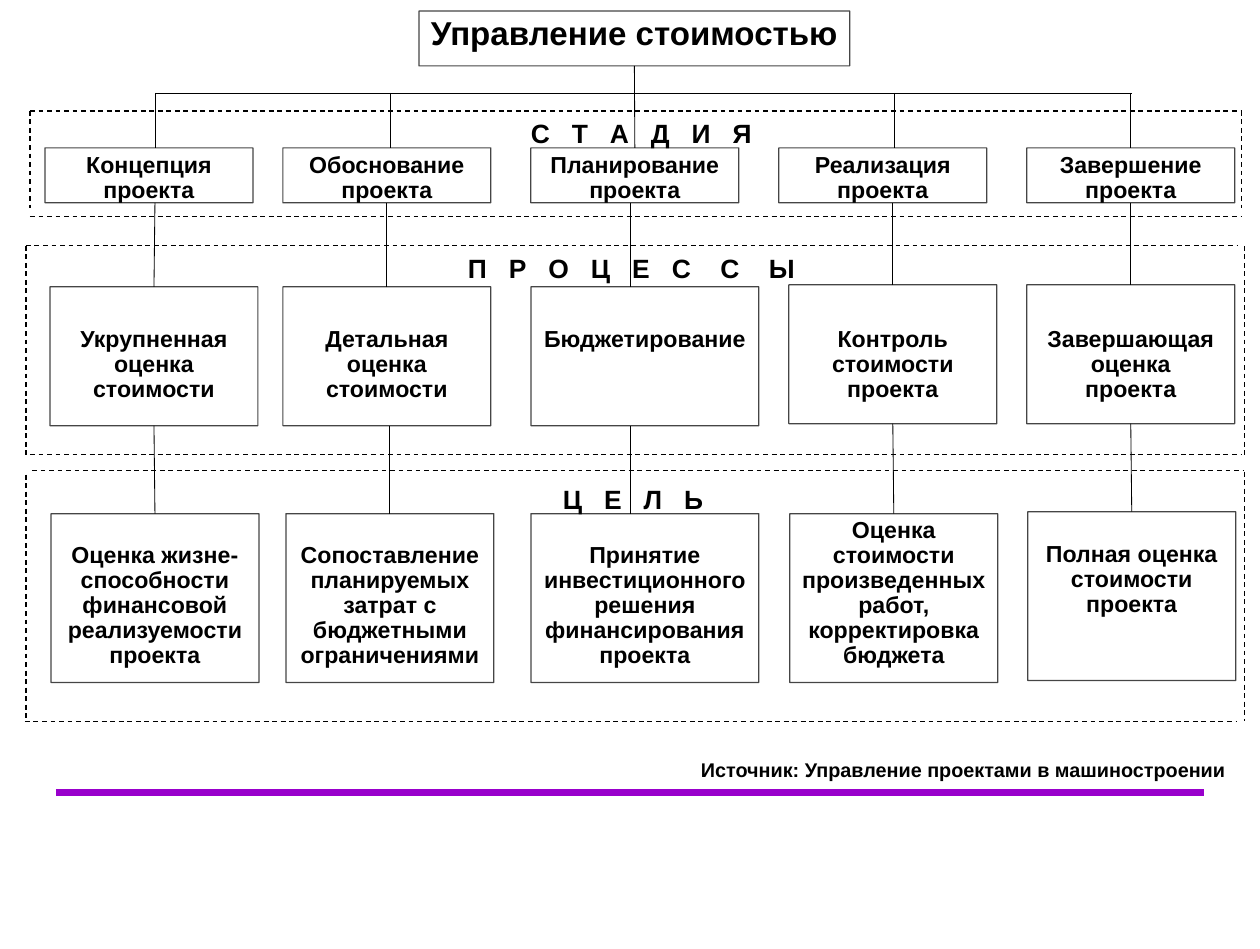
"""Builds the slide on cost management across project stages, processes and goals."""
from lxml import etree
from pptx import Presentation
from pptx import util as u
from pptx.dml.color import RGBColor
from pptx.enum import dml, shapes, text
from pptx.oxml import ns

PX = 7684
SLIDE_INCHES = (10.59, 7.98)
COLORS = {"ink": "000000", "paper": "FFFFFF", "rule": "9900CC"}
BOX_LINE_ALPHA = 72000
JOIN_REACH = 2
TOP, BOTTOM = 0, 2

TITLE = ("Управление стоимостью", (419, 11, 431, 55))
STAGE_TOP, STAGE_HEIGHT, PROCESS_HEIGHT, GOAL_HEIGHT = 148, 55, 139, 169
STAGES = [
    ("Концепция проекта", 45, STAGE_TOP, 208, 6),
    ("Обоснование проекта", 283, STAGE_TOP, 208, 6),
    ("Планирование проекта", 531, STAGE_TOP, 208, 6),
    ("Реализация проекта", 779, STAGE_TOP, 208, 6),
    ("Завершение проекта", 1027, STAGE_TOP, 208, 6),
]
PROCESSES = [
    ("Укрупненная оценка стоимости", 50, 287, 208, 41),
    ("Детальная оценка стоимости", 283, 287, 208, 41),
    ("Бюджетирование", 531, 287, 228, 41),
    ("Контроль стоимости проекта", 789, 285, 208, 43),
    ("Завершающая оценка проекта", 1027, 285, 208, 43),
]
GOALS = [
    ("Оценка жизне- способности финансовой реализуемости проекта", 51, 514, 208, 30),
    ("Сопоставление планируемых затрат с бюджетными ограничениями", 286, 514, 208, 30),
    ("Принятие инвестиционного решения финансирования проекта", 531, 514, 228, 30),
    ("Оценка стоимости произведенных работ, корректировка бюджета", 790, 514, 208, 5),
    ("Полная оценка стоимости проекта", 1028, 512, 208, 31),
]
SIDE_INSET = 11
WIDE_INSETS = {"Завершающая оценка проекта": 18}
BUS = (156, 1132, 93)
DROPS = {0: 155, 1: 391, 3: 895, 4: 1131}
STAGE_LINKS = [155, 387, 631, 893, 1131]
GOAL_LINKS = [155, 390, 631, 893, 1132]
FRAME_ROWS = [(30, 1241, 111), (30, 1241, 217), (26, 1238, 246),
              (30, 1241, 455), (32, 1244, 471), (25, 1236, 722)]
FRAME_SIDES = [(30, 111, 208), (1242, 111, 208), (26, 246, 455),
               (1245, 246, 456), (26, 475, 722), (1245, 472, 721)]
RULE = (56, 793, 1204, 793)
LABELS = [
    ([("С Т А Д И Я", 445)], (520, 111, 248, 44), 16),
    ([("П Р О Ц Е ", 445), ("С С ", 667), ("Ы", 0)], (457, 246, 362, 44), 16),
    ([("Ц Е Л Ь", 445)], (552, 477, 248, 44), 16),
    ([("Источник: Управление проектами в машиностроении", 0)], (690, 752, 560, 36), 12),
]


def color(name):
    return RGBColor.from_string(COLORS[name])


def apply(target, values):
    for name, value in values.items():
        setattr(target, name, value)


def write(box, spans, size, top_inset=6, side_inset=SIDE_INSET, **layout):
    frame = box.text_frame
    apply(frame, {"word_wrap": True, "vertical_anchor": text.MSO_ANCHOR.TOP,
                  "margin_left": side_inset * PX, "margin_right": side_inset * PX,
                  "margin_top": top_inset * PX, "margin_bottom": 6 * PX})
    para = frame.paragraphs[0]
    apply(para, layout)
    for words, spacing in spans:
        span = para.add_run()
        span.text = words
        apply(span.font, {"name": "Arial", "size": u.Pt(size), "bold": True})
        span.font.color.rgb = color("ink")
        if spacing:
            span.font._element.set("spc", str(spacing))


def add_box(page, words, place, size=14, top_inset=6):
    box = page.shapes.add_shape(shapes.MSO_SHAPE.RECTANGLE, *(n * PX for n in place))
    box.shadow.inherit = False
    box.fill.solid()
    box.fill.fore_color.rgb = color("paper")
    box.line.color.rgb = color("ink")
    box.line.width = u.Pt(0.75)
    ink = box._element.spPr.find(ns.qn("a:ln")).find(".//" + ns.qn("a:srgbClr"))
    etree.SubElement(ink, ns.qn("a:alpha")).set("val", str(BOX_LINE_ALPHA))
    write(box, [(words, 0)], size, top_inset, WIDE_INSETS.get(words, SIDE_INSET),
          alignment=text.PP_ALIGN.CENTER, line_spacing=0.9)
    return box


def add_line(page, ends, width=0.5, name="ink", dash=None):
    line = page.shapes.add_connector(shapes.MSO_CONNECTOR.STRAIGHT, *(n * PX for n in ends))
    line.line.color.rgb = color(name)
    apply(line.line, {"width": u.Pt(width), "dash_style": dash})
    etree.SubElement(line._element.spPr, ns.qn("a:effectLst"))
    return line


def near_middle(box, x):
    return abs(box.left + box.width / 2 - x * PX) <= JOIN_REACH * PX


def link(page, x, upper, lower):
    line = add_line(page, (x, (upper.top + upper.height) // PX, x, lower.top // PX))
    if near_middle(upper, x):
        line.begin_connect(upper, BOTTOM)
    if near_middle(lower, x):
        line.end_connect(lower, TOP)


def main():
    deck = Presentation()
    deck.slide_width, deck.slide_height = (u.Inches(n) for n in SLIDE_INCHES)
    page = deck.slides.add_slide(deck.slide_layouts[6])

    add_line(page, RULE, 4, "rule")
    title = add_box(page, *TITLE, size=20)
    stages, processes, goals = (
        [add_box(page, words, (left, top, width, height), top_inset=inset)
         for words, left, top, width, inset in row]
        for row, height in ((STAGES, STAGE_HEIGHT), (PROCESSES, PROCESS_HEIGHT),
                            (GOALS, GOAL_HEIGHT)))

    link(page, 635, title, stages[2])
    bus_left, bus_right, bus_y = BUS
    add_line(page, (bus_left, bus_y, bus_right, bus_y))
    for column, x in DROPS.items():
        drop = add_line(page, (x, bus_y, x, STAGE_TOP))
        if near_middle(stages[column], x):
            drop.end_connect(stages[column], TOP)
    for xs, uppers, lowers in ((STAGE_LINKS, stages, processes),
                               (GOAL_LINKS, processes, goals)):
        for x, upper, lower in zip(xs, uppers, lowers):
            link(page, x, upper, lower)

    frame_lines = [(left, y, right, y) for left, right, y in FRAME_ROWS]
    frame_lines += [(x, top, x, bottom) for x, top, bottom in FRAME_SIDES]
    for ends in frame_lines:
        add_line(page, ends, 0.75, dash=dml.MSO_LINE.DASH)

    for spans, place, size in LABELS:
        label = page.shapes.add_textbox(*(n * PX for n in place))
        write(label, spans, size)

    deck.save("out.pptx")


if __name__ == "__main__":
    main()
